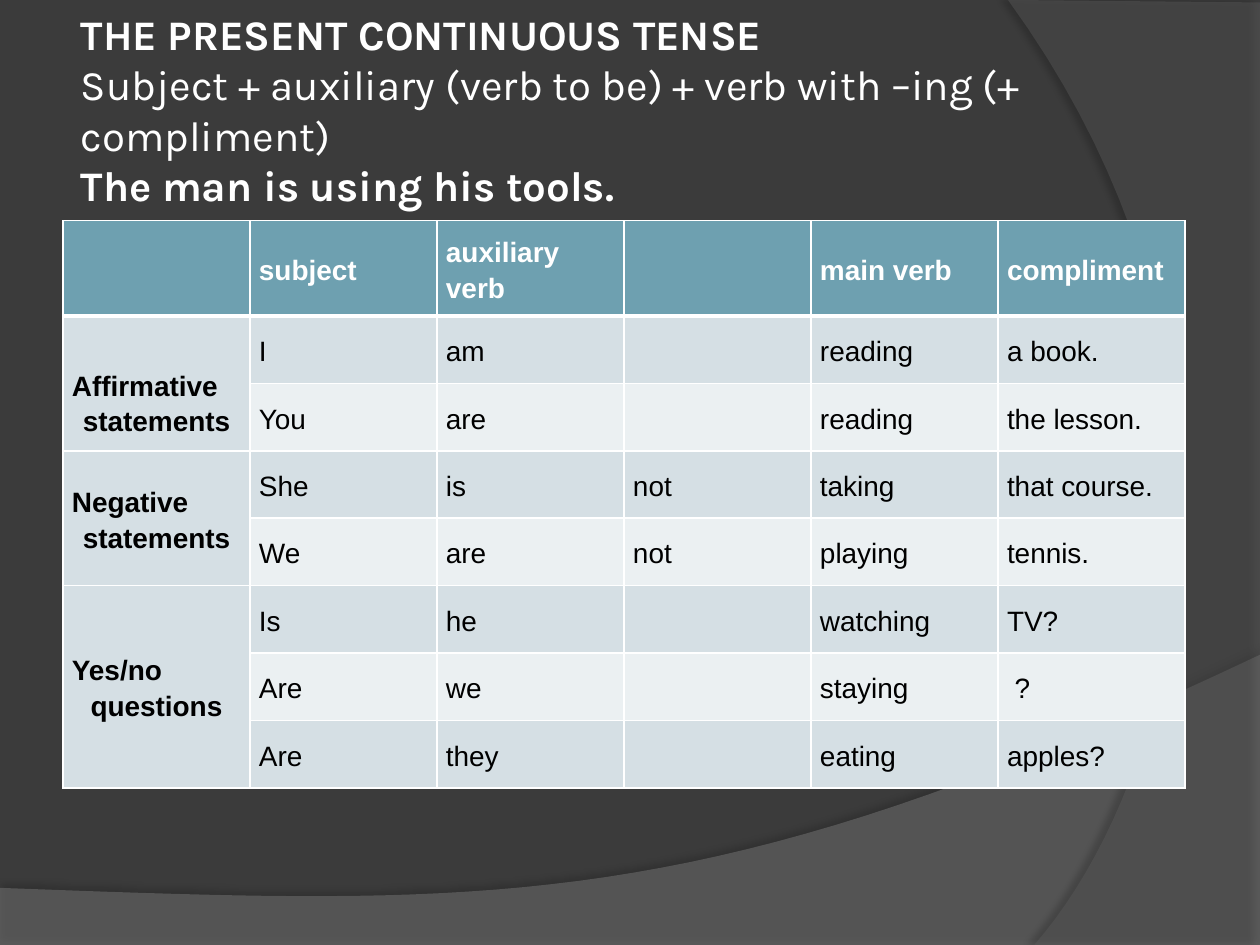
"""Build a grammar slide on the present continuous tense."""
from dataclasses import dataclass

from lxml import etree
from pptx import Presentation
from pptx.dml.color import RGBColor
from pptx.dml.fill import FillFormat
from pptx.enum.text import MSO_ANCHOR, PP_ALIGN
from pptx.oxml.ns import qn
from pptx.slide import Slide
from pptx.table import Table, _Cell
from pptx.util import Cm, Pt

MIDDLE = MSO_ANCHOR.MIDDLE
CENTER = PP_ALIGN.CENTER
WHITE, BLACK = "FFFFFF", "000000"
BACKGROUND, HEADER = "3B3B3B", "6EA0B0"
BANDS = ("D5DFE4", "EBF0F2")
STEPS = 40
MARGIN = 0.18
COLUMN_WIDTH, HEADER_HEIGHT, ROW_HEIGHT = 3.77, 1.83, 1.36

Point = tuple[float, float]


@dataclass
class Swoosh:
    corners: list[Point]
    curve: list[Point]
    color: str
    opacity: int
    shadow_opacity: int
    shadow_distance: float
    shadow_angle: int


@dataclass
class Group:
    label: str
    rows: list[list[str]]
    margin_top: float = MARGIN


SWOOSHES = [
    Swoosh([(0, 17.9), (0, 19.05), (25.4, 19.05), (25.4, 13.2)],
           [(25.4, 13.2), (14.2, 18.52), (9.93, 18.26), (0, 17.9)],
           "7F7F7F", 45, 35, 3.5, 270),
    Swoosh([(25.4, 0.05), (25.4, 19.05), (20.85, 19.05)],
           [(20.85, 19.05), (23.75, 15.72), (25.86, 7.62), (20.32, 0)],
           "5E5E5E", 40, 45, 4, 180),
]
TITLE = [
    "THE PRESENT CONTINUOUS TENSE",
    "Subject + auxiliary (verb to be) + verb with –ing (+ compliment)",
    "The man is using his tools.",
]
HEADINGS = ["", "subject", "auxiliary verb", "", "main verb", "compliment"]
GROUPS = [
    Group("Affirmative\nstatements", [
        ["I", "am", "", "reading", "a book."],
        ["You", "are", "", "reading", "the lesson."],
    ], margin_top=0.93),
    Group("Negative\nstatements", [
        ["She", "is", "not", "taking", "that course."],
        ["We", "are", "not", "playing", "tennis."],
    ]),
    Group("Yes/no\nquestions", [
        ["Is", "he", "", "watching", "TV?"],
        ["Are", "we", "", "staying", " ?"],
        ["Are", "they", "", "eating", "apples?"],
    ]),
]


def paint(fill: FillFormat, color: str) -> None:
    """Make a fill solid in a hex colour."""
    fill.solid()
    fill.fore_color.rgb = RGBColor.from_string(color)


def add_opacity(color_element: etree._Element, percent: int) -> None:
    """Give a colour element an opacity."""
    etree.SubElement(color_element, qn("a:alpha"), val=str(percent * 1000))


def bezier(curve: list[Point], t: float) -> Point:
    """Return the point at t on a cubic curve."""
    weights = ((1 - t) ** 3, 3 * t * (1 - t) ** 2, 3 * t * t * (1 - t), t ** 3)
    return (sum(w * x for w, (x, _) in zip(weights, curve)),
            sum(w * y for w, (_, y) in zip(weights, curve)))


def draw_swoosh(s: Slide, swoosh: Swoosh) -> None:
    """Draw a translucent curved shape with a soft shadow."""
    arc = [bezier(swoosh.curve, i / STEPS) for i in range(1, STEPS + 1)]
    points = [(Cm(x), Cm(y)) for x, y in swoosh.corners + arc]
    builder = s.shapes.build_freeform(*points[0])
    builder.add_line_segments(points[1:])
    sp = builder.convert_to_shape()
    sp.line.fill.background()
    paint(sp.fill, swoosh.color)
    sp_pr = sp._element.spPr
    add_opacity(sp_pr.find(f"{qn('a:solidFill')}/{qn('a:srgbClr')}"), swoosh.opacity)
    sp.shadow.inherit = False
    shadow = etree.SubElement(
        sp_pr.find(qn("a:effectLst")), qn("a:outerShdw"), blurRad=str(Pt(4)),
        dist=str(Pt(swoosh.shadow_distance)), dir=str(swoosh.shadow_angle * 60000),
        algn="ctr", rotWithShape="0")
    add_opacity(etree.SubElement(shadow, qn("a:srgbClr"), val=BLACK),
                swoosh.shadow_opacity)


def draw_title(s: Slide) -> None:
    """Write the heading, the pattern and the example sentence."""
    tf = s.shapes.add_textbox(Cm(1.5), Cm(1.12), Cm(20.75), Cm(3.18)).text_frame
    tf.word_wrap = True
    tf.vertical_anchor = MIDDLE
    tf.margin_left = tf.margin_right = tf.margin_top = Cm(0.13)
    tf.margin_bottom = Cm(1.14)
    tf.text = "\v".join(TITLE)
    p = tf.paragraphs[0]
    p.font.size = Pt(24)
    for r, bold in zip(p.runs, (True, False, True)):
        r.font.name, r.font.size, r.font.bold = "Karla", Pt(24), bold
        paint(r.font.fill, WHITE)


def set_borders(cell: _Cell, top: int, bottom: int) -> None:
    """Put white lines on all four sides of a cell."""
    tc_pr = cell._tc.get_or_add_tcPr()
    widths = {"a:lnL": 1, "a:lnR": 1, "a:lnT": top, "a:lnB": bottom}
    for index, (tag, width) in enumerate(widths.items()):
        ln = etree.Element(qn(tag), w=str(Pt(width)))
        fill = etree.SubElement(ln, qn("a:solidFill"))
        etree.SubElement(fill, qn("a:srgbClr"), val=WHITE)
        tc_pr.insert(index, ln)


def fill_cell(cell: _Cell, text: str, fill: str, color: str, bold: bool) -> None:
    """Write and format the text of a cell."""
    paint(cell.fill, fill)
    cell.vertical_anchor = MIDDLE
    cell.margin_left = cell.margin_right = Cm(MARGIN)
    cell.margin_top = cell.margin_bottom = Cm(MARGIN)
    cell.text_frame.text = text
    for index, p in enumerate(cell.text_frame.paragraphs):
        p.line_spacing = 1.15
        if index:
            p.alignment = CENTER
        for r in p.runs:
            r.font.name, r.font.size, r.font.bold = "Arial", Pt(16), bold
            paint(r.font.fill, color)


def fill_group(table: Table, first: int, group: Group) -> None:
    """Fill the rows of one sentence type and merge its label cell."""
    for offset, words in enumerate(group.rows):
        row = first + offset
        band = BANDS[(row - 1) % 2]
        for column, word in enumerate(words, 1):
            fill_cell(table.cell(row, column), word, band, BLACK, False)
    label = table.cell(first, 0)
    label.merge(table.cell(first + len(group.rows) - 1, 0))
    fill_cell(label, group.label, BANDS[0], BLACK, True)
    label.margin_top = Cm(group.margin_top)


def draw_table(s: Slide) -> None:
    """Draw the table of sentence patterns."""
    rows = 1 + sum(len(group.rows) for group in GROUPS)
    columns = len(HEADINGS)
    height = HEADER_HEIGHT + (rows - 1) * ROW_HEIGHT
    table = s.shapes.add_table(rows, columns, Cm(1.27), Cm(4.45),
                               Cm(columns * COLUMN_WIDTH), Cm(height)).table
    for column, heading in enumerate(HEADINGS):
        table.columns[column].width = Cm(COLUMN_WIDTH)
        fill_cell(table.cell(0, column), heading, HEADER, WHITE, True)
    for index, row in enumerate(table.rows):
        row.height = Cm(ROW_HEIGHT if index else HEADER_HEIGHT)
    first = 1
    for group in GROUPS:
        fill_group(table, first, group)
        first += len(group.rows)
    for row in range(rows):
        for column in range(columns):
            set_borders(table.cell(row, column), 3 if row == 1 else 1, 1 if row else 3)


def main() -> None:
    """Create and save the slide."""
    prs = Presentation()
    prs.slide_width, prs.slide_height = Cm(25.4), Cm(19.05)
    s = prs.slides.add_slide(prs.slide_layouts[6])
    paint(s.background.fill, BACKGROUND)
    for swoosh in SWOOSHES:
        draw_swoosh(s, swoosh)
    draw_title(s)
    draw_table(s)
    prs.save("out.pptx")


if __name__ == "__main__":
    main()
